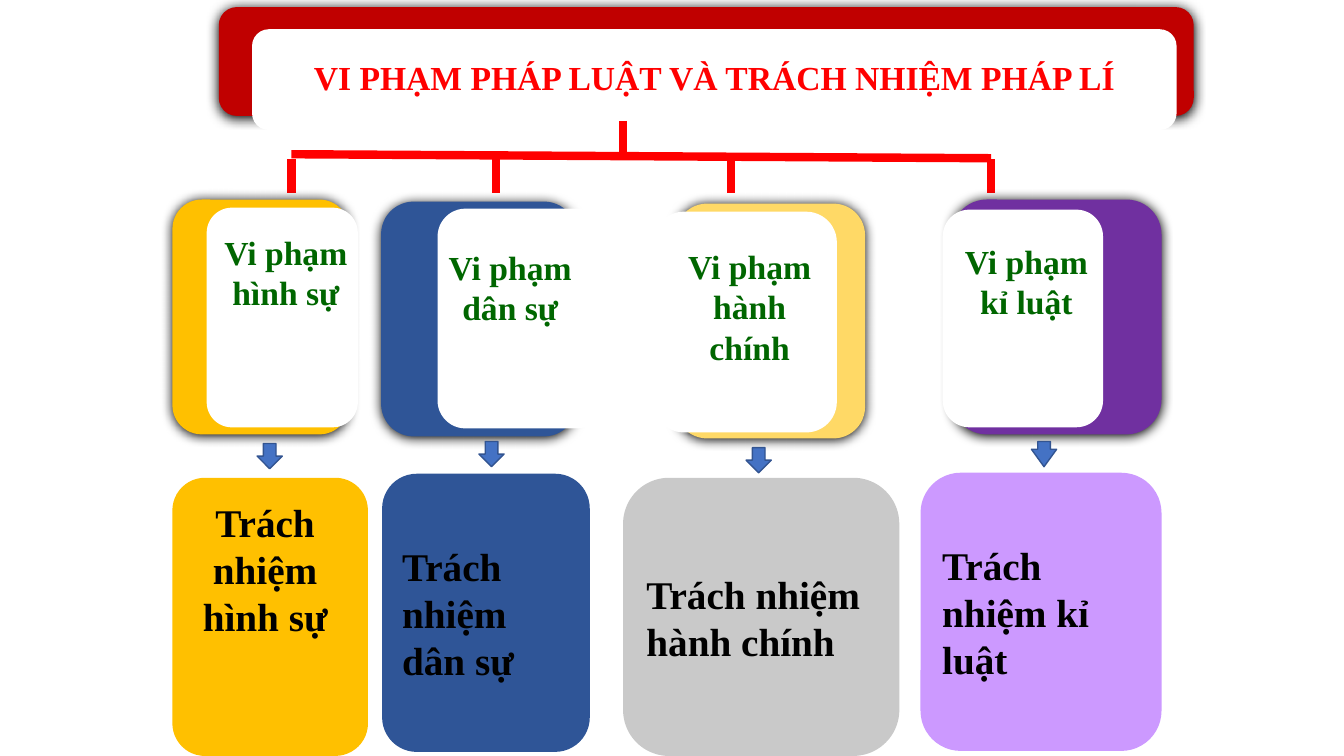
from lxml import etree
from pptx import Presentation, util as u
from pptx.dml.color import RGBColor
from pptx.enum import shapes, text
from pptx.oxml.ns import qn

SHAPE = shapes.MSO_SHAPE
ALIGN = text.PP_ALIGN
ANCHOR = text.MSO_ANCHOR
FONT = "Times New Roman"
RED, WHITE, GREEN = "FF0000", "FFFFFF", "006600"


def color(code):
    return RGBColor.from_string(code)


def inches(*vals):
    return [u.Inches(val) for val in vals]


def write(frame, words, size=24, ink="000000", align=ALIGN.CENTER, anchor=ANCHOR.TOP):
    frame.word_wrap = True
    frame.vertical_anchor = anchor
    para = frame.paragraphs[0]
    para.alignment = align
    run = para.add_run()
    run.text = words
    font = run.font
    font.name, font.size, font.bold = FONT, u.Pt(size), True
    font.color.rgb = color(ink)


def label(slide, box, words, **look):
    write(slide.shapes.add_textbox(*inches(*box)).text_frame, words, **look)


def block(slide, box, fill, kind=SHAPE.ROUNDED_RECTANGLE, edge=None, glow=False):
    shape = slide.shapes.add_shape(kind, *inches(*box))
    shape.fill.solid()
    shape.fill.fore_color.rgb = color(fill)
    if edge:
        shape.line.color.rgb = color(edge)
        shape.line.width = u.Pt(1)
    else:
        shape.line.fill.background()
    shape.shadow.inherit = False
    if glow:
        effects = shape._element.spPr.find(qn("a:effectLst"))
        outer = etree.SubElement(effects, qn("a:outerShdw"), blurRad=str(u.Pt(8.5)),
                                 dist=str(u.Pt(1)), dir="5400000",
                                 algn="t", rotWithShape="0")
        etree.SubElement(outer, qn("a:srgbClr"), val="000000")
    return shape


def bar(slide, x, y, end, low):
    line = slide.shapes.add_connector(shapes.MSO_CONNECTOR.STRAIGHT,
                                      *inches(x, y, end, low))
    line.line.color.rgb = color(RED)
    line.line.width = u.Pt(6)
    etree.SubElement(line._element.spPr, qn("a:effectLst"))


def banner(slide, box, words):
    x, y, w, h = box
    block(slide, box, "C00000", glow=True)
    block(slide, (x + 0.33, y + 0.22, w - 0.5, h - 0.08), WHITE)
    label(slide, (x + 0.58, y + 0.45, w - 1, 0.5), words, ink=RED)


def tree(slide, box, stem, drops):
    x, y, w, h = box
    bar(slide, stem, y, stem, y + 0.32)
    bar(slide, x, y + 0.33, x + w, y + 0.37)
    for drop in drops:
        bar(slide, drop, y + 0.38, drop, y + h)


def breach(slide, box, fill, panel, note, words):
    x, y, w, h = box
    block(slide, box, fill, glow=True)
    dx, dy, wide, high = panel
    block(slide, (x + dx, y + dy, wide, high), WHITE)
    dx, dy, wide, high = note
    label(slide, (x + dx, y + dy, wide, high), words, ink=GREEN)


def arrow(slide, x, y, head=0.5):
    shape = block(slide, (x, y, 0.25, 0.25), "4472C4", SHAPE.DOWN_ARROW, "325491")
    shape.adjustments[1] = head


def duty(slide, box, fill, words, align):
    shape = block(slide, box, fill)
    if align == ALIGN.CENTER:
        x, y, w, h = box
        label(slide, (x - 0.1, y + 0.15, w + 0.1, 1.52), words, size=28)
    else:
        write(shape.text_frame, words, size=28, align=align, anchor=ANCHOR.MIDDLE)


BREACHES = [
    ((1.71, 1.98, 1.75, 2.33), "FFC000", (0.34, 0.08, 1.5, 2.18),
     (0.38, 0.27, 1.49, 0.91), "Vi phạm hình sự"),
    ((3.78, 2, 1.94, 2.33), "2F5597", (0.56, 0.07, 1.66, 2.18),
     (0.44, 0.4, 1.68, 0.91), "Vi phạm dân sự"),
    ((6.7, 2.02, 1.88, 2.33), "FFD966", (-0.22, 0.08, 1.82, 2.19),
     (-0.08, 0.37, 1.63, 1.31), "Vi phạm hành chính"),
    ((9.44, 1.98, 2.08, 2.33), "7030A0", (-0.09, 0.1, 1.59, 2.16),
     (-0.01, 0.36, 1.5, 0.91), "Vi phạm kỉ luật"),
]
ARROWS = [(2.55, 4.4), (4.75, 4.38), (7.4, 4.44), (10.23, 4.38, 0.69)]
DUTIES = [
    ((1.71, 4.74, 1.94, 2.76), "FFC000", "Trách nhiệm hình sự", ALIGN.CENTER),
    ((3.79, 4.7, 2.06, 2.76), "2F5597", "Trách nhiệm dân sự", ALIGN.JUSTIFY),
    ((6.18, 4.74, 2.74, 2.76), "C9C9C9", "Trách nhiệm hành chính", ALIGN.LEFT),
    ((9.13, 4.69, 2.39, 2.76), "CC99FF", "Trách nhiệm kỉ luật", ALIGN.LEFT),
]


def main():
    deck = Presentation()
    deck.slide_width, deck.slide_height = inches(13.33, 7.5)
    slide = deck.slides.add_slide(deck.slide_layouts[6])
    banner(slide, (2.17, 0.07, 9.67, 1.08), "VI PHẠM PHÁP LUẬT VÀ TRÁCH NHIỆM PHÁP LÍ")
    tree(slide, (2.89, 1.2, 6.94, 0.71), 6.18, (2.89, 4.92, 7.25, 9.83))
    for item in BREACHES:
        breach(slide, *item)
    for item in ARROWS:
        arrow(slide, *item)
    for item in DUTIES:
        duty(slide, *item)
    deck.save("out.pptx")


if __name__ == "__main__":
    main()
